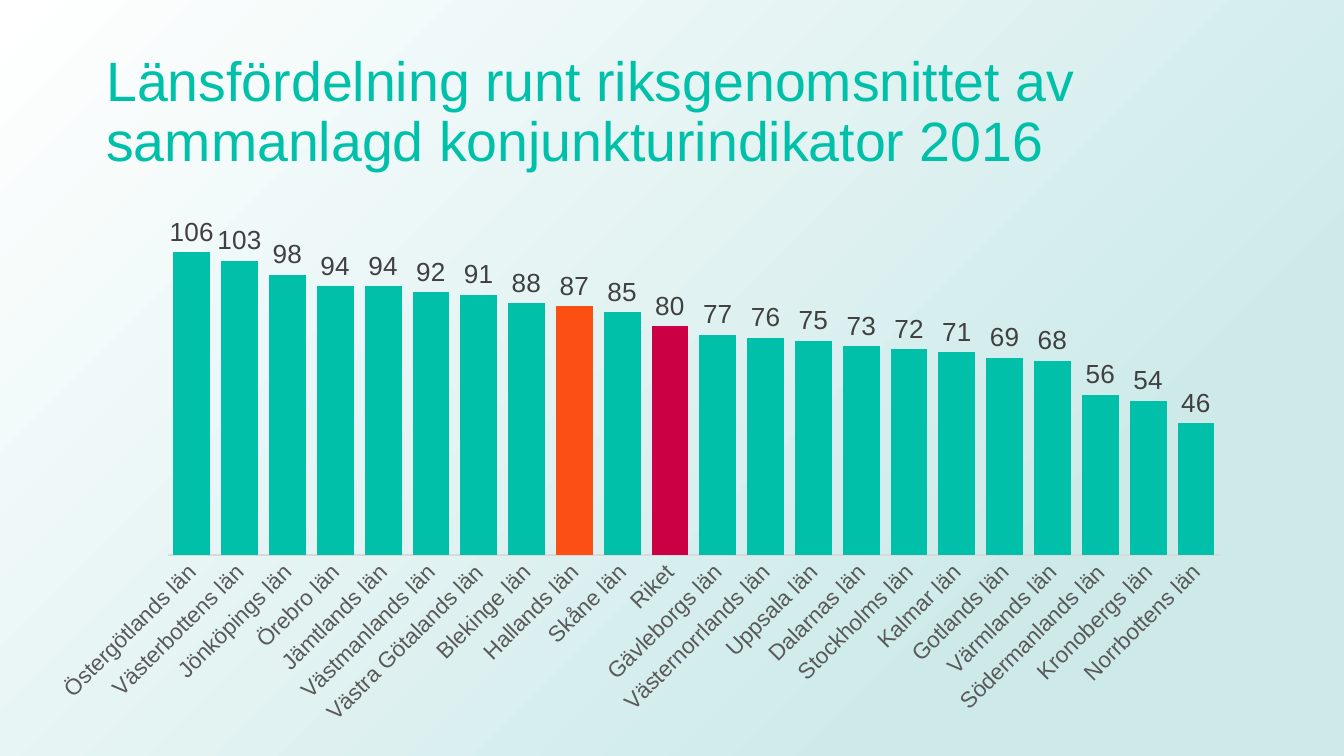
from dataclasses import dataclass

import pptx
import pptx.chart.data
import pptx.dml.color
import pptx.enum.chart
import pptx.enum.shapes
import pptx.enum.text
import pptx.oxml
import pptx.oxml.ns
import pptx.util

EMU_PER_PX = 914400 / 134.4


@dataclass(frozen=True)
class Theme:
    font: str = "Arial"
    teal: str = "00C0A9"
    orange: str = "FB4F14"
    crimson: str = "CB0044"
    label: str = "404040"
    axis_text: str = "595959"
    axis_line: str = "D9D9D9"
    pale: str = "CDEAE9"
    white: str = "FFFFFF"
    title_size: float = 29.7
    value_size: int = 14
    county_size: int = 12


@dataclass(frozen=True)
class Box:
    left: int
    top: int
    width: int
    height: int

    def emu(self) -> tuple[int, ...]:
        return tuple(px(v) for v in (self.left, self.top, self.width, self.height))


@dataclass(frozen=True)
class Bar:
    county: str
    value: int
    color: str


THEME = Theme()
SLIDE = Box(0, 0, 1344, 756)
TITLE = Box(93, 40, 1158, 147)
CHART = Box(35, 202, 1208, 533)
PLOT = Box(168, 212, 1052, 343)

VALUES = {
    "Östergötlands län": 106, "Västerbottens län": 103, "Jönköpings län": 98,
    "Örebro län": 94, "Jämtlands län": 94, "Västmanlands län": 92,
    "Västra Götalands län": 91, "Blekinge län": 88, "Hallands län": 87,
    "Skåne län": 85, "Riket": 80, "Gävleborgs län": 77,
    "Västernorrlands län": 76, "Uppsala län": 75, "Dalarnas län": 73,
    "Stockholms län": 72, "Kalmar län": 71, "Gotlands län": 69,
    "Värmlands län": 68, "Södermanlands län": 56, "Kronobergs län": 54,
    "Norrbottens län": 46,
}
HIGHLIGHTS = {"Hallands län": THEME.orange, "Riket": THEME.crimson}
BARS = [Bar(c, v, HIGHLIGHTS.get(c, THEME.teal)) for c, v in VALUES.items()]


def px(value: int) -> int:
    return round(value * EMU_PER_PX)


def rgb(color: str) -> pptx.dml.color.RGBColor:
    return pptx.dml.color.RGBColor.from_string(color)


def set_font(font, size: float, color: str) -> None:
    font.name = THEME.font
    font.size = pptx.util.Pt(size)
    font.color.rgb = rgb(color)


def add_background(s) -> None:
    sp = s.shapes.add_shape(pptx.enum.shapes.MSO_SHAPE.RECTANGLE, *SLIDE.emu())
    sp.shadow.inherit = False
    sp.line.fill.background()
    sp.fill.gradient()
    grad = sp._element.spPr.find(pptx.oxml.ns.qn("a:gradFill"))
    # Radial gradient centred on the lower right corner
    radial = pptx.oxml.parse_xml(
        f'<a:gradFill {pptx.oxml.ns.nsdecls("a")} rotWithShape="1"><a:gsLst>'
        f'<a:gs pos="23000"><a:srgbClr val="{THEME.pale}"/></a:gs>'
        f'<a:gs pos="100000"><a:srgbClr val="{THEME.white}"/></a:gs></a:gsLst>'
        '<a:path path="circle"><a:fillToRect l="100000" t="100000"/></a:path>'
        '</a:gradFill>')
    grad.getparent().replace(grad, radial)


def add_title(s, text: str) -> None:
    tf = s.shapes.add_textbox(*TITLE.emu()).text_frame
    tf.word_wrap = True
    tf.vertical_anchor = pptx.enum.text.MSO_ANCHOR.MIDDLE
    p = tf.paragraphs[0]
    p.text = text
    p.line_spacing = 0.9
    set_font(p.font, THEME.title_size, THEME.teal)


def place_plot(chart) -> None:
    """Fix the inner plot area as fractions of the chart frame."""
    fractions = {
        "x": (PLOT.left - CHART.left) / CHART.width,
        "y": (PLOT.top - CHART.top) / CHART.height,
        "w": PLOT.width / CHART.width,
        "h": PLOT.height / CHART.height,
    }
    sizes = "".join(f'<c:{k} val="{v:.4f}"/>' for k, v in fractions.items())
    layout = pptx.oxml.parse_xml(
        f'<c:layout {pptx.oxml.ns.nsdecls("c")}><c:manualLayout>'
        '<c:layoutTarget val="inner"/><c:xMode val="edge"/><c:yMode val="edge"/>'
        f'{sizes}</c:manualLayout></c:layout>')
    area = chart._chartSpace.find(".//" + pptx.oxml.ns.qn("c:plotArea"))
    for old in area.findall(pptx.oxml.ns.qn("c:layout")):
        area.remove(old)
    area.insert(0, layout)


def add_bar_chart(s, bars: list[Bar]) -> None:
    data = pptx.chart.data.CategoryChartData(number_format="0")
    data.categories = [bar.county for bar in bars]
    data.add_series("Series 1", [bar.value for bar in bars])
    chart = s.shapes.add_chart(
        pptx.enum.chart.XL_CHART_TYPE.COLUMN_CLUSTERED, *CHART.emu(), data).chart
    chart.has_legend = False
    chart.has_title = False
    set_font(chart.font, THEME.county_size, THEME.axis_text)
    place_plot(chart)

    # Axes
    counties, scale = chart.category_axis, chart.value_axis
    counties.major_tick_mark = pptx.enum.chart.XL_TICK_MARK.NONE
    counties.format.line.color.rgb = rgb(THEME.axis_line)
    counties.format.line.width = pptx.util.Pt(0.75)
    set_font(counties.tick_labels.font, THEME.county_size, THEME.axis_text)
    body = counties._element.find(".//" + pptx.oxml.ns.qn("a:bodyPr"))
    body.set("rot", str(-45 * 60000))
    scale.minimum_scale, scale.maximum_scale = 0, 120
    scale.has_major_gridlines = False
    scale.visible = False

    # Columns
    plot = chart.plots[0]
    plot.gap_width = 30
    plot.vary_by_categories = False
    series = plot.series[0]
    series.format.fill.solid()
    series.format.fill.fore_color.rgb = rgb(THEME.teal)
    for i, bar in enumerate(bars):
        if bar.color != THEME.teal:
            fill = series.points[i].format.fill
            fill.solid()
            fill.fore_color.rgb = rgb(bar.color)

    # Value labels
    labels = series.data_labels
    labels.show_value = True
    labels.number_format = "0"
    labels.number_format_is_linked = False
    labels.position = pptx.enum.chart.XL_LABEL_POSITION.OUTSIDE_END
    set_font(labels.font, THEME.value_size, THEME.label)


def main() -> None:
    prs = pptx.Presentation()
    prs.slide_width, prs.slide_height = px(SLIDE.width), px(SLIDE.height)
    s = prs.slides.add_slide(prs.slide_layouts[6])
    add_background(s)
    add_title(s, "Länsfördelning runt riksgenomsnittet av "
                 "sammanlagd konjunkturindikator 2016")
    add_bar_chart(s, BARS)
    prs.save("out.pptx")


if __name__ == "__main__":
    main()
